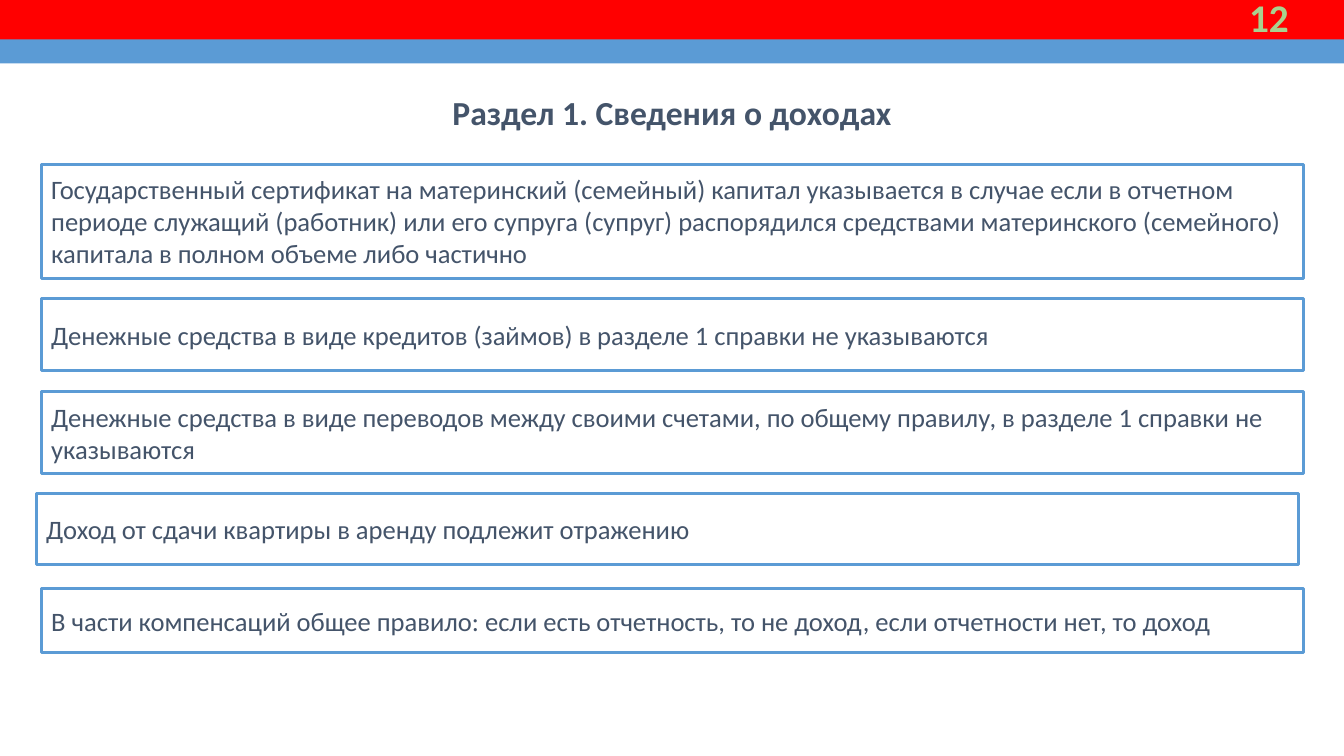
from collections import namedtuple

from pptx import Presentation
from pptx.dml.color import RGBColor
from pptx.enum.shapes import MSO_SHAPE
from pptx.enum.text import MSO_ANCHOR, PP_ALIGN
from pptx.util import Inches, Pt

RED = RGBColor(0xFF, 0x00, 0x00)
BLUE = RGBColor(0x5B, 0x9B, 0xD5)
GREEN = RGBColor(0xA9, 0xD1, 0x8E)
SLATE = RGBColor(0x44, 0x54, 0x6A)

COLUMNS, ROWS = 1333, 750
CELL = Inches(0.01)
GAP = 20

Box = namedtuple("Box", "left top width height")
Rule = namedtuple("Rule", "text height shift gap", defaults=(0, GAP))

INCOME_RULES = [
    Rule("Государственный сертификат на материнский (семейный) капитал указывается "
         "в случае если в отчетном периоде служащий (работник) или его супруга (супруг) "
         "распорядился средствами материнского (семейного) капитала в полном объеме "
         "либо частично", 113),
    Rule("Денежные средства в виде кредитов (займов) в разделе 1 справки "
         "не указываются", 72),
    Rule("Денежные средства в виде переводов между своими счетами, по общему правилу, "
         "в разделе 1 справки не указываются", 82),
    Rule("Доход от сдачи квартиры в аренду подлежит отражению", 70, shift=-5, gap=24),
    Rule("В части компенсаций общее правило: если есть отчетность, то не доход, "
         "если отчетности нет, то доход", 63),
]


def to_emu(box):
    return [round(length * CELL) for length in box]


def write(shape, text, size=19, color=SLATE, bold=False,
          align=PP_ALIGN.LEFT, anchor=MSO_ANCHOR.MIDDLE):
    frame = shape.text_frame
    frame.word_wrap = True
    frame.vertical_anchor = anchor
    frame.margin_left = frame.margin_right = Inches(0.1)
    frame.margin_top = frame.margin_bottom = Inches(0.05)
    paragraph = frame.paragraphs[0]
    paragraph.alignment = align
    run = paragraph.add_run()
    run.text = text
    run.font.name = "Calibri"
    run.font.size = Pt(size)
    run.font.bold = bold
    run.font.color.rgb = color


def add_rectangle(slide, box, fill=None, line=None):
    rectangle = slide.shapes.add_shape(MSO_SHAPE.RECTANGLE, *to_emu(box))
    rectangle.shadow.inherit = False
    if fill is None:
        rectangle.fill.background()
    else:
        rectangle.fill.solid()
        rectangle.fill.fore_color.rgb = fill
    if line is None:
        rectangle.line.fill.background()
    else:
        rectangle.line.color.rgb = line
        rectangle.line.width = Pt(2.25)
    return rectangle


def add_header(slide, box):
    red_height, blue_top = 51, 39
    add_rectangle(slide, box._replace(height=red_height), fill=RED)
    add_rectangle(slide, box._replace(top=box.top + blue_top,
                                      height=box.height - blue_top), fill=BLUE)
    number_box = Box(box.left + box.width - 170, box.top - 5, 125, 44)
    page_number = slide.shapes.add_textbox(*to_emu(number_box))
    write(page_number, "12", size=28, color=GREEN, bold=True, align=PP_ALIGN.RIGHT)


def set_title(slide, box):
    title = slide.shapes.title
    title.left, title.top, title.width, title.height = to_emu(box)
    write(title, "Раздел 1. Сведения о доходах", size=24, bold=True,
          align=PP_ALIGN.CENTER, anchor=MSO_ANCHOR.TOP)


def add_rules(slide, box, rules):
    top = box.top
    for rule in rules:
        frame = Box(box.left + rule.shift, top, box.width, rule.height)
        write(add_rectangle(slide, frame, line=BLUE), rule.text)
        top += rule.height + rule.gap


def main():
    presentation = Presentation()
    presentation.slide_width = COLUMNS * CELL
    presentation.slide_height = ROWS * CELL
    slide = presentation.slides.add_slide(presentation.slide_layouts[5])
    add_header(slide, Box(0, 0, COLUMNS, 63))
    set_title(slide, Box(60, 86, 1213, 50))
    add_rules(slide, Box(41, 163, 1252, 483), INCOME_RULES)
    presentation.save("out.pptx")


if __name__ == "__main__":
    main()
